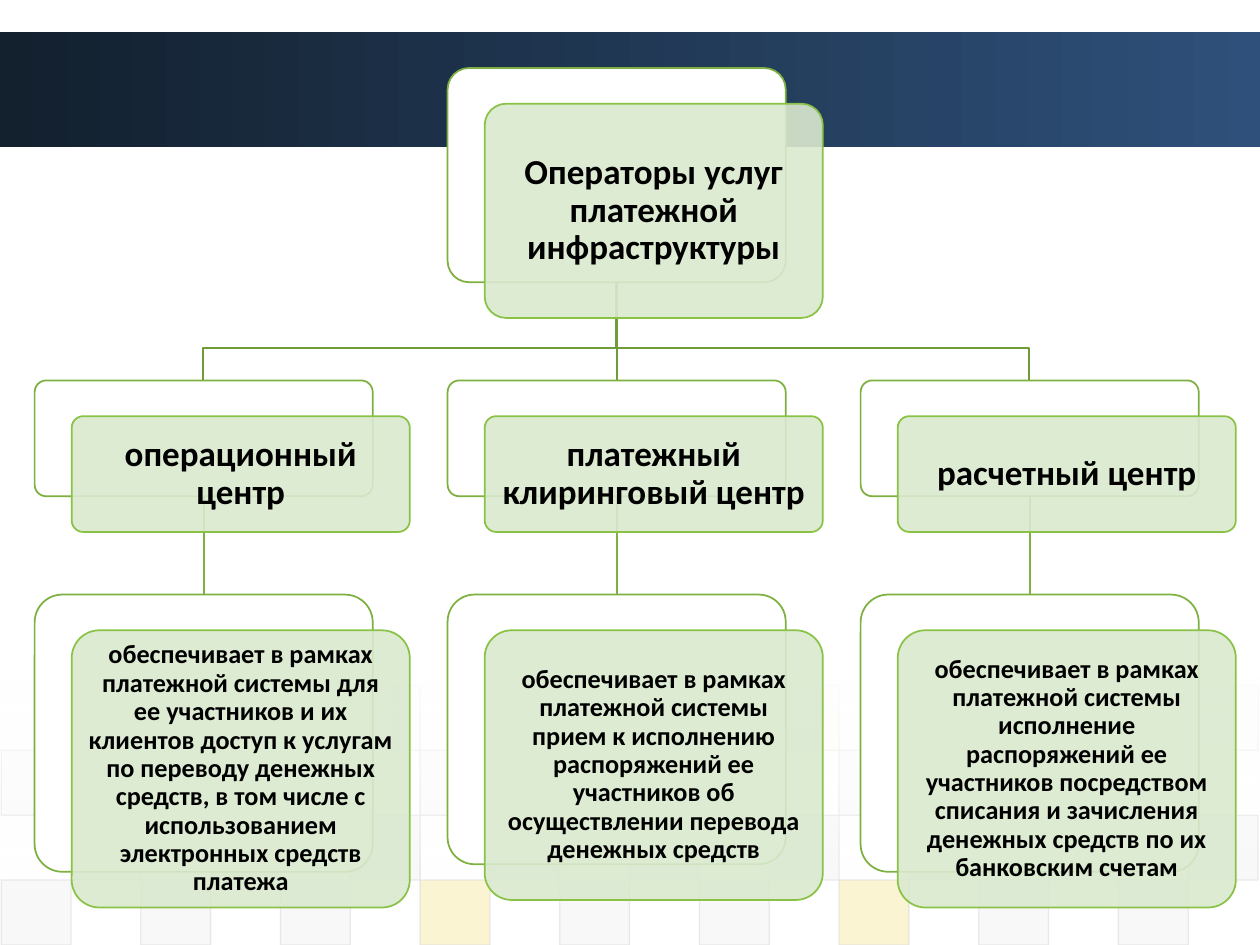
from dataclasses import dataclass

from lxml.etree import SubElement
from pptx import Presentation
from pptx.dml.color import RGBColor
from pptx.enum.shapes import MSO_CONNECTOR, MSO_SHAPE
from pptx.enum.text import MSO_ANCHOR, PP_ALIGN
from pptx.oxml.ns import qn
from pptx.util import Pt


@dataclass(frozen=True)
class Theme:
    font: str = "Calibri"
    title_size: float = 20
    body_size: float = 15
    text: str = "000000"
    white: str = "FFFFFF"
    banner_dark: str = "13202E"
    banner_light: str = "2E507A"
    grey: str = "DDDDDD"
    pale: str = "EAEAEA"
    yellow: str = "EFC821"
    green: str = "8AC246"
    card: str = "DAE9CF"
    back_line: str = "7DB040"
    link_top: str = "6F9B38"


THEME = Theme()

CARD_W = 193.2
SHIFT_X, SHIFT_Y = 21.2, 20.4
COLUMN_STEP = 236
ROOT_TOP, ROOT_H = 38.9, 122.4
CENTRE_TOP, CENTRE_H = 217.4, 66.2
DUTY_TOP = 339.8
ELBOW_Y = 199.4

ROOT = "Операторы услуг платежной инфраструктуры"
CENTRES = [
    ("операционный центр", 158.4,
     "обеспечивает в рамках платежной системы для ее участников и их клиентов "
     "доступ к услугам по переводу денежных средств, в том числе "
     "с использованием электронных средств платежа"),
    ("платежный клиринговый центр", 154.1,
     "обеспечивает в рамках платежной системы прием к исполнению распоряжений "
     "ее участников об осуществлении перевода денежных средств"),
    ("расчетный центр", 158.4,
     "обеспечивает в рамках платежной системы исполнение распоряжений ее "
     "участников посредством списания и зачисления денежных средств "
     "по их банковским счетам"),
]


def rgb(color):
    return RGBColor.from_string(color)


def set_alpha(fill_owner, *percents):
    """Give the colours below an element their opacities, in order."""
    for clr, percent in zip(fill_owner.iter(qn("a:srgbClr")), percents):
        SubElement(clr, qn("a:alpha")).set("val", str(percent * 1000))


def add_box(slide, kind, left, top, width, height):
    sp = slide.shapes.add_shape(kind, Pt(left), Pt(top), Pt(width), Pt(height))
    sp.shadow.inherit = False
    return sp


def add_gradient(slide, box, colors, angle):
    sp = add_box(slide, MSO_SHAPE.RECTANGLE, *box)
    sp.line.fill.background()
    sp.fill.gradient()
    sp.fill.gradient_angle = angle
    for stop, color in zip(sp.fill.gradient_stops, colors):
        stop.color.rgb = rgb(color)
    return sp


def add_tiles(slide, left, top, width, height):
    """Four rows of tiles on an 18-column grid, fading out upwards."""
    t = THEME
    pitch = width / 18
    row_h = height / 4
    rows = [
        (range(5, 18, 6), t.pale, 5, {11: t.yellow}),
        (range(0, 13, 6), t.grey, 10, {}),
        (range(1, 18, 2), t.grey, 20, {3: t.green, 13: t.green}),
        (range(0, 17, 2), t.grey, 20, {6: t.yellow, 12: t.yellow}),
    ]
    for i, (columns, color, opacity, accents) in enumerate(rows):
        for c in columns:
            sp = add_box(slide, MSO_SHAPE.RECTANGLE, left + c * pitch,
                         top + i * row_h, pitch, row_h)
            sp.fill.solid()
            sp.fill.fore_color.rgb = rgb(accents.get(c, color))
            sp.line.color.rgb = rgb(t.grey)
            sp.line.width = Pt(0.75)
            set_alpha(sp._element, opacity, 60)
    veil = add_gradient(slide, (0, top - 5, 720, 116.6), (t.white, t.white), 270)
    set_alpha(veil._element, 90, 0)


def add_link(slide, x, top, bottom, color):
    cxn = slide.shapes.add_connector(
        MSO_CONNECTOR.STRAIGHT, Pt(x), Pt(top), Pt(x), Pt(bottom))
    SubElement(cxn._element.spPr, qn("a:effectLst"))
    cxn.line.color.rgb = rgb(color)
    cxn.line.width = Pt(1)


def add_elbow(slide, x1, y1, x2, y2):
    builder = slide.shapes.build_freeform(x1, y1, scale=Pt(1))
    builder.add_line_segments(
        [(x1, ELBOW_Y), (x2, ELBOW_Y), (x2, y2)], close=False)
    sp = builder.convert_to_shape()
    sp.shadow.inherit = False
    sp.fill.background()
    sp.line.color.rgb = rgb(THEME.link_top)
    sp.line.width = Pt(1)


def add_card(slide, left, top, height, text, size, margin):
    """A white back plate with a shifted translucent card that holds the text."""
    t = THEME
    plates = [(0, 0, t.white, t.back_line, 100),
              (SHIFT_X, SHIFT_Y, t.card, t.green, 90)]
    for dx, dy, fill, line, opacity in plates:
        sp = add_box(slide, MSO_SHAPE.ROUNDED_RECTANGLE,
                     left + dx, top + dy, CARD_W, height)
        sp.adjustments[0] = 0.1
        sp.fill.solid()
        sp.fill.fore_color.rgb = rgb(fill)
        sp.line.color.rgb = rgb(line)
        sp.line.width = Pt(1)
        set_alpha(sp._element, opacity)

    tf = sp.text_frame
    tf.word_wrap = True
    tf.vertical_anchor = MSO_ANCHOR.MIDDLE
    tf.margin_left = tf.margin_right = Pt(margin)
    tf.margin_top = tf.margin_bottom = Pt(margin)
    tf.text = text
    p = tf.paragraphs[0]
    p.alignment = PP_ALIGN.CENTER
    p.line_spacing = 0.9
    font = p.runs[0].font
    font.name, font.size, font.bold = t.font, Pt(size), True
    font.color.rgb = rgb(t.text)


def add_hierarchy(slide, left):
    t = THEME
    lefts = [left + i * COLUMN_STEP for i in range(len(CENTRES))]
    root_left = lefts[1]
    root_x = root_left + CARD_W / 2
    root_bottom = ROOT_TOP + ROOT_H
    for x in (col + CARD_W / 2 for col in lefts):
        add_link(slide, x, CENTRE_TOP + CENTRE_H, DUTY_TOP, t.back_line)
        if x == root_x:
            add_link(slide, x, root_bottom, CENTRE_TOP, t.link_top)
        else:
            add_elbow(slide, root_x, root_bottom, x, CENTRE_TOP)

    add_card(slide, root_left, ROOT_TOP, ROOT_H, ROOT, t.title_size, 6)
    for col, (name, duty_h, duty) in zip(lefts, CENTRES):
        add_card(slide, col, CENTRE_TOP, CENTRE_H, name, t.title_size, 6)
        add_card(slide, col, DUTY_TOP, duty_h, duty, t.body_size, 4.5)


def main():
    prs = Presentation()
    prs.slide_width, prs.slide_height = Pt(720), Pt(540)
    slide = prs.slides.add_slide(prs.slide_layouts[6])
    add_gradient(slide, (0, 18, 720, 66.2),
                 (THEME.banner_dark, THEME.banner_light), 0)
    add_tiles(slide, 0.7, 391.7, 718.2, 148.3)
    add_hierarchy(slide, 19.8)
    prs.save("out.pptx")


if __name__ == "__main__":
    main()
